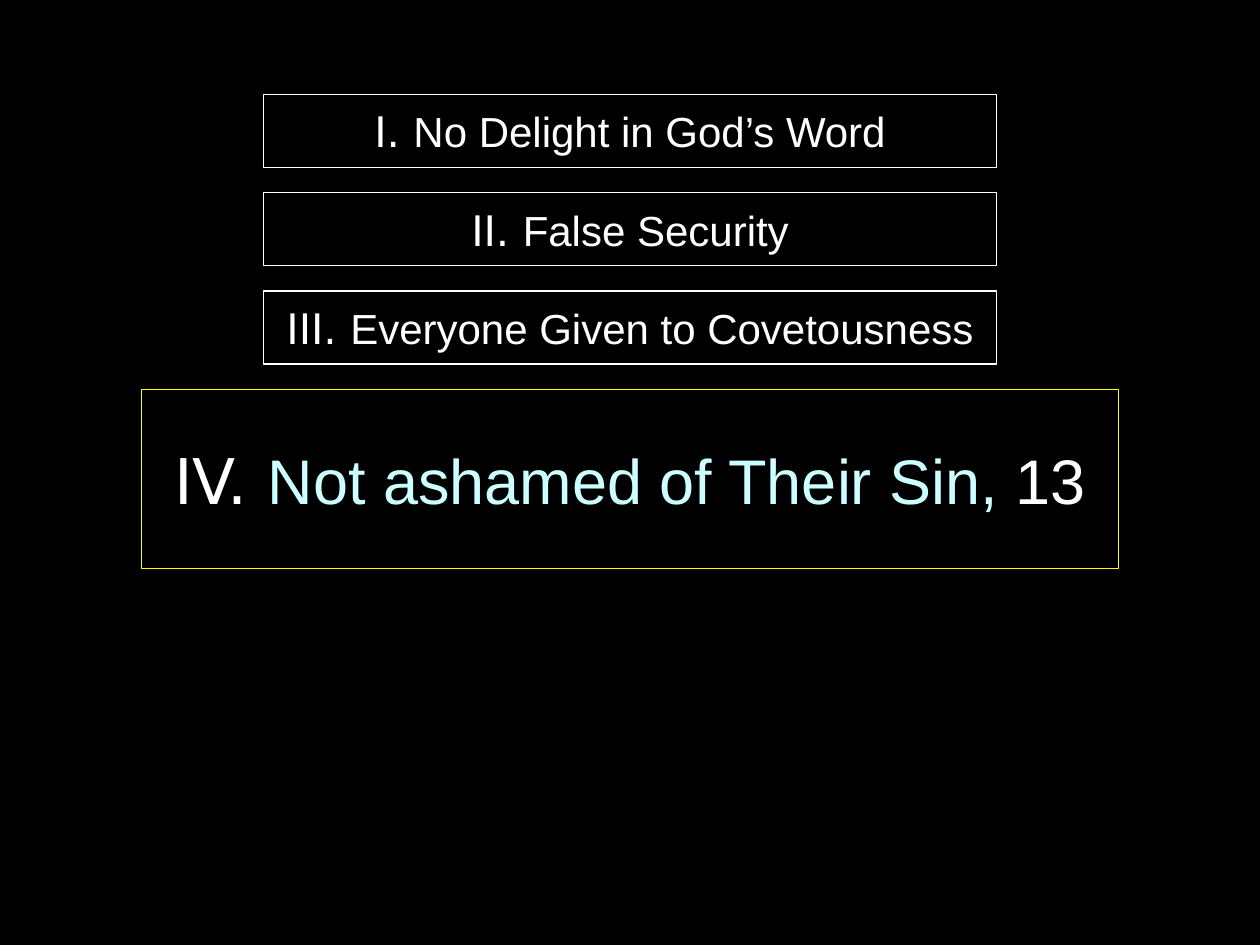
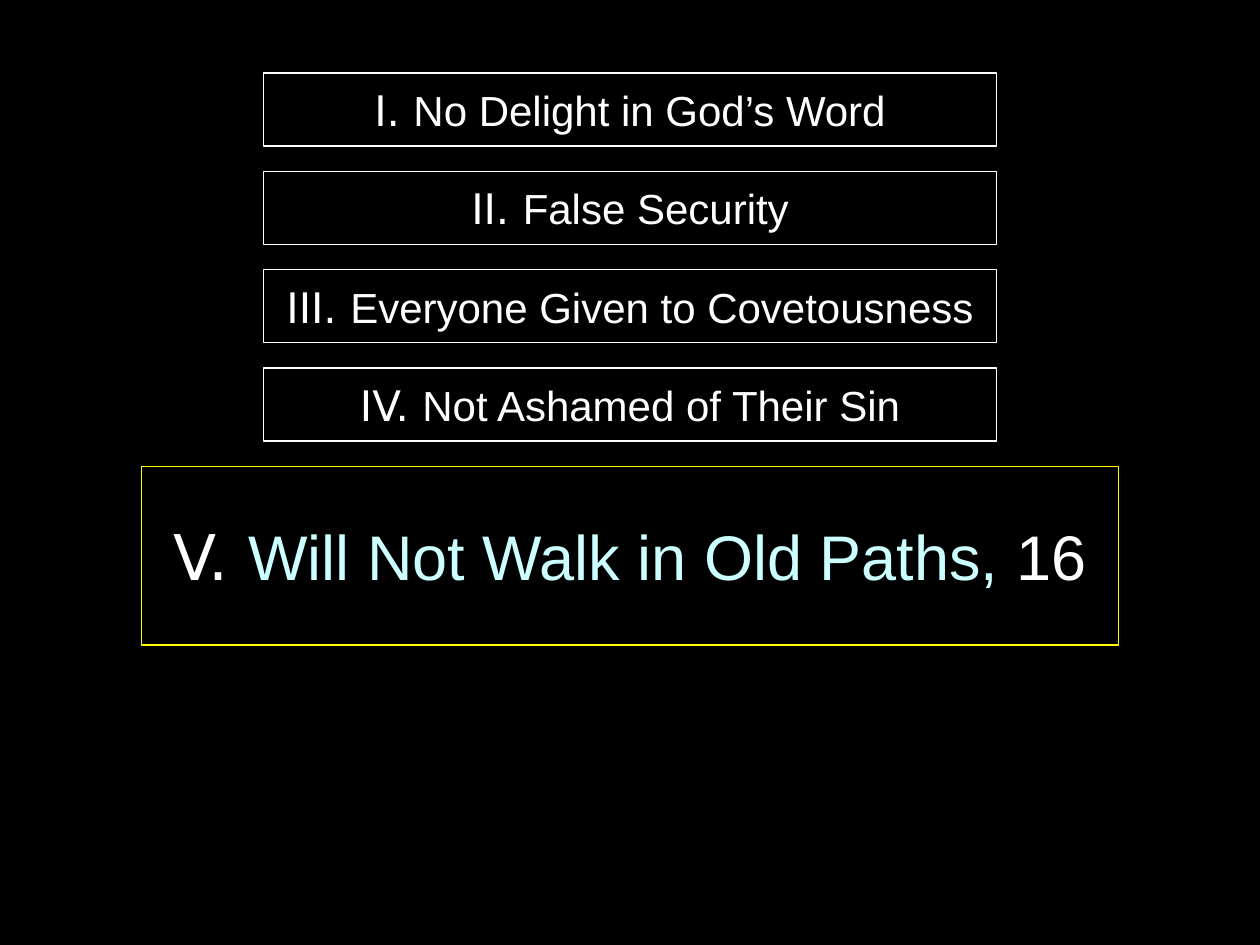
from dataclasses import dataclass

from pptx import Presentation
from pptx.dml.color import RGBColor as Rgb
from pptx.enum.shapes import MSO_SHAPE as Preset
from pptx.enum.text import MSO_ANCHOR as Anchor, PP_ALIGN as Align
from pptx.slide import Slide
from pptx.util import Inches, Pt


@dataclass(frozen=True)
class Theme:
    black: Rgb = Rgb(0x00, 0x00, 0x00)
    white: Rgb = Rgb(0xFF, 0xFF, 0xFF)
    yellow: Rgb = Rgb(0xFF, 0xFF, 0x00)
    pale_cyan: Rgb = Rgb(0xCC, 0xFF, 0xFF)
    numeral_font: str = "DejaVu Sans"
    heading_font: str = "Arial"
    covered_size: int = 24
    current_size: int = 36
    border_width: float = 0.75


@dataclass(frozen=True)
class BoxStyle:
    width: float  # inches
    height: float
    size: int
    border: Rgb
    heading: Rgb


@dataclass(frozen=True)
class Point:
    numeral: str
    heading: str
    verse: str = ""


@dataclass(frozen=True)
class Outline:
    top: float  # inches from the top edge to the first box
    covered: list[Point]
    current: Point


THEME = Theme()
SLIDE_WIDTH, SLIDE_HEIGHT = 10, 7.5
ROW_PITCH = 0.78

COVERED = BoxStyle(5.82, 0.58, THEME.covered_size, THEME.white, THEME.white)
CURRENT = BoxStyle(7.75, 1.42, THEME.current_size, THEME.yellow, THEME.pale_cyan)

# Points of the sermon, in order
DELIGHT = Point("I", "No Delight in God’s Word")
SECURITY = Point("II", "False Security")
COVETOUSNESS = Point("III", "Everyone Given to Covetousness")
SHAME = Point("IV", "Not Ashamed of Their Sin")

OUTLINES = [
    Outline(0.75, [DELIGHT, SECURITY, COVETOUSNESS],
            Point("IV", "Not ashamed of Their Sin, ", "13")),
    Outline(0.58, [DELIGHT, SECURITY, COVETOUSNESS, SHAME],
            Point("V", "Will Not Walk in Old Paths, ", "16")),
]


def draw_point(slide: Slide, point: Point, top: float, style: BoxStyle) -> None:
    """Draw one centred box holding a numeral, a heading and perhaps a verse."""
    left = (SLIDE_WIDTH - style.width) / 2
    box = slide.shapes.add_shape(Preset.RECTANGLE, Inches(left), Inches(top),
                                 Inches(style.width), Inches(style.height))
    box.shadow.inherit = False
    box.fill.solid()
    box.fill.fore_color.rgb = THEME.black
    box.line.color.rgb = style.border
    box.line.width = Pt(THEME.border_width)

    frame = box.text_frame
    frame.word_wrap = True
    frame.vertical_anchor = Anchor.MIDDLE
    line = frame.paragraphs[0]
    line.alignment = Align.CENTER
    line.font.size = Pt(style.size)

    parts = [
        (f"{point.numeral}. ", THEME.numeral_font, THEME.white),
        (point.heading, THEME.heading_font, style.heading),
        (point.verse, THEME.heading_font, THEME.white),
    ]
    for words, font, color in parts:
        if words:
            run = line.add_run()
            run.text = words
            run.font.name = font
            run.font.color.rgb = color


def draw_outline(slide: Slide, outline: Outline) -> None:
    """Stack the covered points, then the current one, at an equal pitch."""
    slide.background.fill.solid()
    slide.background.fill.fore_color.rgb = THEME.black
    for row, point in enumerate([*outline.covered, outline.current]):
        style = CURRENT if point is outline.current else COVERED
        draw_point(slide, point, outline.top + row * ROW_PITCH, style)


def main() -> None:
    deck = Presentation()
    deck.slide_width = Inches(SLIDE_WIDTH)
    deck.slide_height = Inches(SLIDE_HEIGHT)
    blank = deck.slide_layouts[6]
    for outline in OUTLINES:
        draw_outline(deck.slides.add_slide(blank), outline)
    deck.save("out.pptx")


if __name__ == "__main__":
    main()
